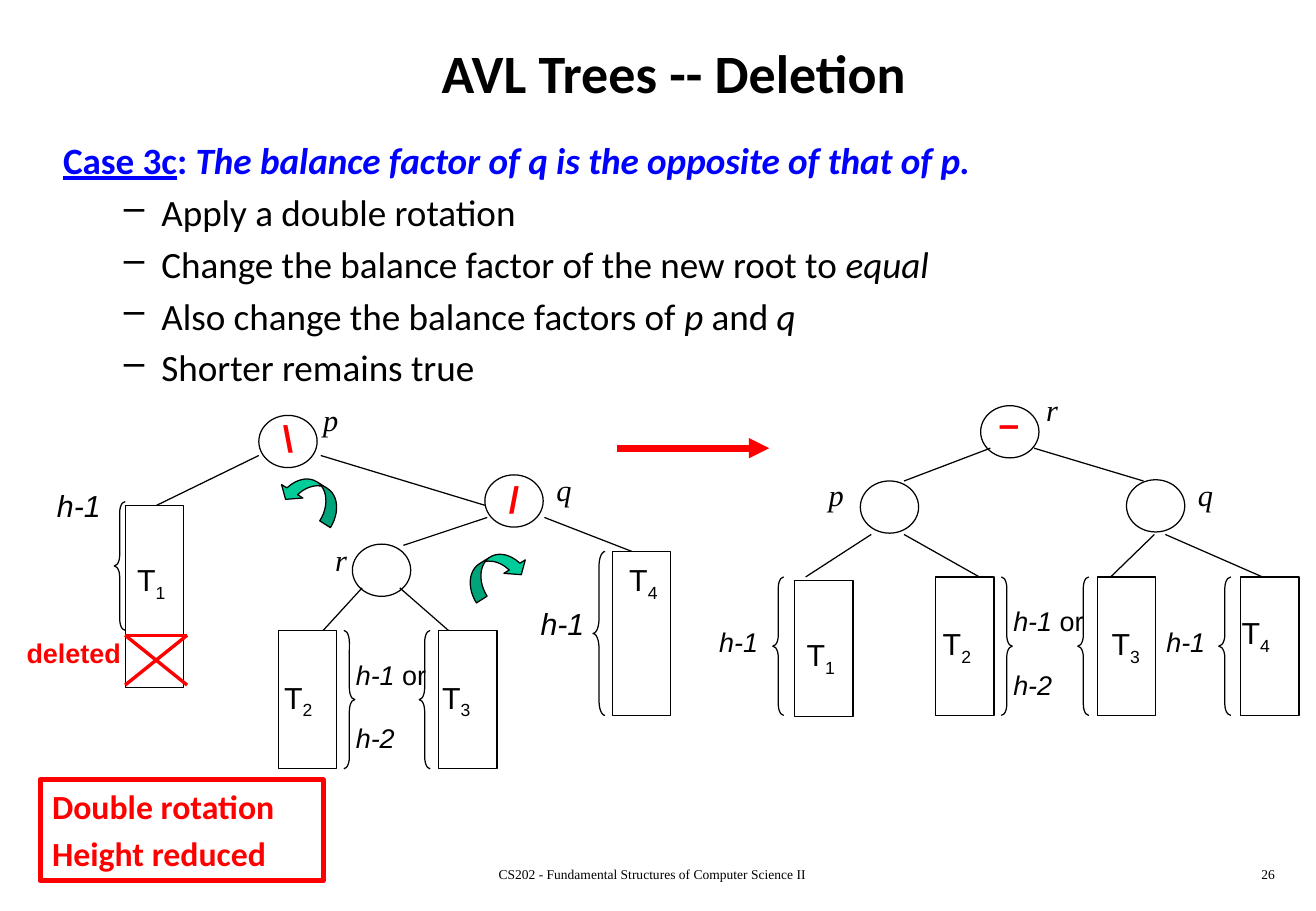
import pptx
import pptx.util
import pptx.dml.color
import pptx.enum.shapes
import pptx.enum.text
import pptx.oxml.ns
import lxml.etree

Inches = pptx.util.Inches
Pt = pptx.util.Pt
KIND = pptx.enum.shapes.MSO_SHAPE
ALIGN = pptx.enum.text.PP_ALIGN
ANCHOR = pptx.enum.text.MSO_ANCHOR

BLACK, RED, BLUE, GREEN, WHITE = "000000", "FF0000", "0000FF", "00CC99", "FFFFFF"
SANS, SERIF, MAIN = "Arial", "Times New Roman", "Calibri"

TITLE = "AVL Trees -- Deletion"
CASE = [("Case 3c", "u"), (": ", ""), ("The balance factor of q is the opposite of that of p.", "i")]
STEPS = [
    [("Apply a double rotation", "")],
    [("Change the balance factor of the new root to ", ""), ("equal", "i")],
    [("Also change the balance factors of ", ""), ("p", "i"), (" and ", ""), ("q", "i")],
    [("Shorter remains true", "")],
]
RESULT = ["Double rotation", "Height reduced"]
FOOT = [
    ("CS202 - Fundamental Structures of Computer Science II", 3.34, 4.06, ALIGN.CENTER),
    ("26", 8.33, 2.26, ALIGN.RIGHT),
]

NODES = [
    (2.13, 3.42), (3.99, 3.91), (2.9, 4.48),
    (8.07, 3.34), (7.08, 3.96), (9.27, 3.95),
]
NAMES = [
    ("p", 2.56, 3.25), ("q", 4.48, 3.83), ("r", 2.66, 4.41),
    ("r", 8.51, 3.17), ("p", 6.72, 3.87), ("q", 9.76, 3.87),
]
SIGNS = [("\\", 2.23, 3.37), ("/", 4.09, 3.87), ("–", 8.12, 3.25)]
TREES = [
    (1.03, 4.16, 1.5), (2.29, 5.19, 1.14), (3.61, 5.19, 1.14), (5.04, 4.54, 1.35),
    (6.54, 4.78, 1.12), (7.7, 4.75, 1.14), (9.03, 4.75, 1.14), (10.21, 4.75, 1.14),
]
TAGS = [
    ("1", 1.03, 4.57), ("2", 2.24, 5.54), ("3", 3.54, 5.54), ("4", 5.08, 4.57),
    ("1", 6.54, 5.19), ("2", 7.66, 5.1), ("3", 9.05, 5.1), ("4", 10.12, 5.01),
]
LEFT, RIGHT = KIND.LEFT_BRACE, KIND.RIGHT_BRACE
BRACES = [
    (LEFT, 0.94, 4.13, 0.09, 1.06, 1), (RIGHT, 2.83, 5.19, 0.09, 1.14, 1.08),
    (LEFT, 3.45, 5.19, 0.09, 1.14, 1.08), (LEFT, 4.88, 4.54, 0.1, 1.35, 1.18),
    (LEFT, 6.36, 4.75, 0.09, 1.14, 1), (RIGHT, 8.24, 4.75, 0.09, 1.14, 1),
    (LEFT, 8.87, 4.75, 0.09, 1.14, 1), (LEFT, 10.03, 4.75, 0.1, 1.14, 0.93),
]
HEIGHTS = [(0.37, 3.96, 18), (4.35, 4.93, 18), (5.82, 5.1, 16), (9.5, 5.1, 16)]
RANGES = [(2.83, 5.37), (8.24, 4.93)]
EDGES = [
    (2.13, 3.75, 1.29, 4.16), (2.64, 3.75, 3.99, 4.16), (4.01, 4.26, 3.32, 4.49),
    (4.48, 4.26, 5.2, 4.54), (2.98, 4.84, 2.66, 5.19), (3.29, 4.84, 3.69, 5.19),
    (8.15, 3.69, 7.44, 3.96), (8.51, 3.69, 9.41, 3.96), (7.17, 4.4, 6.63, 4.75),
    (7.44, 4.4, 8.06, 4.75), (9.5, 4.4, 9.14, 4.75), (9.59, 4.4, 10.39, 4.75),
]
CROSS = [(1.03, 5.23, 1.54, 5.23), (1.54, 5.23, 1.03, 5.64), (1.03, 5.23, 1.54, 5.64)]
TURNS = [(2.43, 3.82, 302.2, ("flipV",)), (3.95, 4.44, 57.8, ("flipH", "flipV"))]

deck = pptx.Presentation()
deck.slide_width, deck.slide_height = Inches(10.83), Inches(7.5)
slide = deck.slides.add_slide(deck.slide_layouts[6])


def color(code):
    return pptx.dml.color.RGBColor.from_string(code)


def child(node, tag, **attrs):
    part = lxml.etree.SubElement(node, pptx.oxml.ns.qn(tag))
    for key, val in attrs.items():
        part.set(key, val)


def write(par, runs, size, face, ink=BLACK, bold=False, align=ALIGN.LEFT, gap=0):
    font = par.font
    font.size, font.name, font.bold = Pt(size), face, bold
    font.color.rgb = color(ink)
    par.alignment, par.space_before = align, Pt(gap)
    for text, style in runs:
        run = par.add_run()
        run.text = text
        if "i" in style:
            run.font.italic = True
        if "u" in style:
            run.font.underline = True
        if "s" in style:
            run._r.get_or_add_rPr().set("baseline", "-25000")


def box(x, y, w, h, anchor=ANCHOR.TOP):
    frame = slide.shapes.add_textbox(Inches(x), Inches(y), Inches(w), Inches(h)).text_frame
    frame.word_wrap, frame.vertical_anchor = True, anchor
    return frame


def label(x, y, w, h, runs, *look, **more):
    write(box(x, y, w, h).paragraphs[0], runs, *look, **more)


def shape(kind, x, y, w, h, fill=None, ink=BLACK, width=0.75):
    item = slide.shapes.add_shape(kind, Inches(x), Inches(y), Inches(w), Inches(h))
    item.shadow.inherit = False
    if fill:
        item.fill.solid()
        item.fill.fore_color.rgb = color(fill)
    else:
        item.fill.background()
    item.line.color.rgb, item.line.width = color(ink), Pt(width)
    return item


def line(x1, y1, x2, y2, ink=BLACK, width=0.75):
    item = slide.shapes.add_connector(
        pptx.enum.shapes.MSO_CONNECTOR.STRAIGHT, Inches(x1), Inches(y1), Inches(x2), Inches(y2))
    item.line.color.rgb, item.line.width = color(ink), Pt(width)
    child(item._element.spPr, "a:effectLst")
    return item


def indent(par, left, hang):
    props = par._p.get_or_add_pPr()
    props.set("marL", str(Inches(left)))
    props.set("indent", str(-Inches(hang)))
    return props


write(box(0.42, 0.17, 10.25, 0.84, ANCHOR.MIDDLE).paragraphs[0],
      [(TITLE, "")], 32, MAIN, bold=True, align=ALIGN.CENTER)

body = box(0.42, 1.08, 9.08, 1.75)
write(body.paragraphs[0], CASE, 22, MAIN, BLUE, True)
indent(body.paragraphs[0], 0.38, 0.38)
for step in STEPS:
    par = body.add_paragraph()
    write(par, step, 22, MAIN, gap=4.4)
    child(indent(par, 0.81, 0.31), "a:buChar", char="–")

for text, x, w, align in FOOT:
    label(x, 7.08, w, 0.25, [(text, "")], 8, SERIF, align=align)

frame = shape(KIND.RECTANGLE, 0.33, 6.42, 2.33, 0.83, WHITE, RED, 3).text_frame
frame.vertical_anchor = ANCHOR.TOP
for i, text in enumerate(RESULT):
    par = frame.add_paragraph() if i else frame.paragraphs[0]
    write(par, [(text, "")], 20, MAIN, RED, True, gap=4 * i)
    indent(par, 0.38, 0.38)

for x, y in NODES:
    shape(KIND.OVAL, x, y, 0.48, 0.43)
for x, y, h in TREES:
    shape(KIND.RECTANGLE, x, y, 0.48, h)
for kind, x, y, w, h, curve in BRACES:
    brace = shape(kind, x, y, w, h)
    brace.adjustments[0], brace.adjustments[1] = curve, 0.5
for edge in EDGES:
    line(*edge)
for edge in CROSS:
    line(*edge, RED, 2)
arrow = line(5.08, 3.69, 6.33, 3.69, RED, 4)
child(arrow.line._get_or_add_ln(), "a:tailEnd", type="triangle")

for x, y, angle, flips in TURNS:
    turn = shape(KIND.CURVED_LEFT_ARROW, x, y, 0.26, 0.54, GREEN)
    turn.rotation = angle
    for i, value in enumerate((0.4, 0.8, 0.33)):
        turn.adjustments[i] = value
    for flip in flips:
        turn._element.spPr.xfrm.set(flip, "1")

for text, x, y in NAMES:
    label(x, y, 0.55, 0.4, [(text, "i")], 18, SERIF)
for text, x, y in SIGNS:
    label(x, y, 0.4, 0.47, [(text, "")], 22, SANS, RED, True)
for num, x, y in TAGS:
    label(x, y, 0.63, 0.4, [("T", ""), (num, "s")], 18, SANS)
for x, y, size in HEIGHTS:
    label(x, y, 0.87, 0.4, [("h-1", "i")], size, SANS)
for x, y in RANGES:
    span = box(x, y, 0.79, 0.64)
    write(span.paragraphs[0], [("h-1 ", "i"), ("or", "")], 16, SANS)
    write(span.add_paragraph(), [("h-2", "i")], 16, SANS, gap=18.4)
label(0.12, 5.19, 1.25, 0.37, [("deleted", "")], 16, SANS, RED, True)

deck.save("out.pptx")
